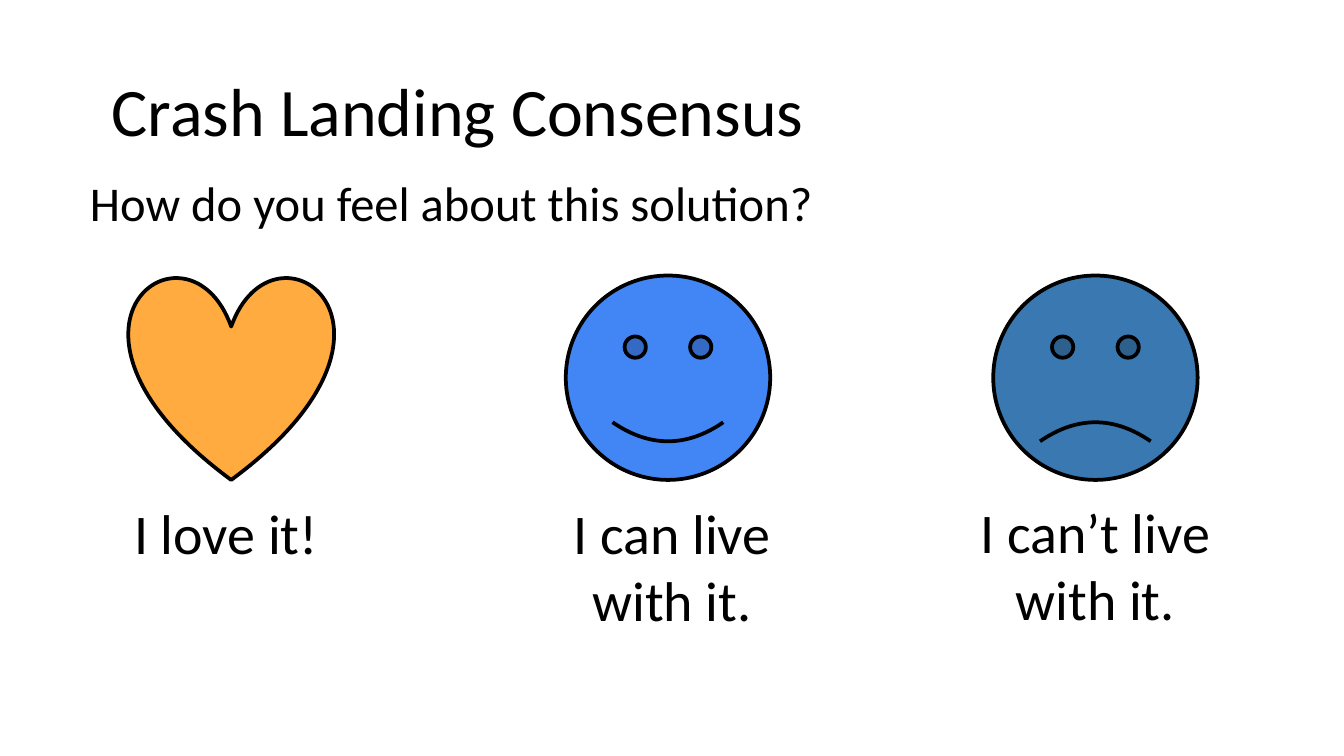
from dataclasses import dataclass

from lxml import etree
from pptx import Presentation
from pptx.dml.color import RGBColor
from pptx.enum.shapes import MSO_SHAPE
from pptx.enum.text import MSO_ANCHOR, MSO_AUTO_SIZE, PP_ALIGN
from pptx.oxml.ns import qn
from pptx.util import Pt

HEART, SMILEY = MSO_SHAPE.HEART, MSO_SHAPE.SMILEY_FACE
LEFT, CENTER = PP_ALIGN.LEFT, PP_ALIGN.CENTER
TOP, BOTTOM = MSO_ANCHOR.TOP, MSO_ANCHOR.BOTTOM


@dataclass(frozen=True)
class Theme:
    font: str = "Calibri"
    ink: str = "000000"
    love: str = "FFAB40"
    accept: str = "4285F4"
    reject: str = "3978B1"
    title: float = 36.4
    body: float = 26
    label: float = 30
    outline: float = 2


THEME = Theme()


def rgb(value):
    return RGBColor.from_string(value)


def place(sp, box):
    sp.left, sp.top, sp.width, sp.height = (Pt(v) for v in box)


def write(sp, text, size, align=LEFT, anchor=TOP, insets=(7.2, 3.6, 7.2, 3.6)):
    tf = sp.text_frame
    tf.word_wrap = True
    tf.auto_size = MSO_AUTO_SIZE.NONE
    tf.vertical_anchor = anchor
    tf.margin_left, tf.margin_top, tf.margin_right, tf.margin_bottom = (
        Pt(v) for v in insets)
    p = tf.paragraphs[0]
    p.alignment = align
    p.space_before = Pt(0)
    r = p.add_run()
    r.text = text
    r.font.name = THEME.font
    r.font.size = Pt(size)
    r.font.color.rgb = rgb(THEME.ink)
    return p


def add_title(s, box, text):
    sp = s.shapes.title
    place(sp, box)
    write(sp, text, THEME.title, anchor=BOTTOM, insets=(0, 3.6, 0, 0))


def add_question(s, box, text):
    sp = s.placeholders[1]
    place(sp, box)
    p = write(sp, text, THEME.body)
    # Plain paragraph: small indent, no bullet
    pPr = p._p.get_or_add_pPr()
    pPr.set("marL", str(Pt(5)))
    pPr.set("indent", "0")
    etree.SubElement(pPr, qn("a:buNone"))


def add_choice(s, box, icon, fill, text, label_box, mouth=None, align=CENTER):
    """Draw an icon in box; label_box is relative to the icon's corner."""
    x, y, w, h = box
    sp = s.shapes.add_shape(icon, Pt(x), Pt(y), Pt(w), Pt(h))
    sp.shadow.inherit = False
    sp.fill.solid()
    sp.fill.fore_color.rgb = rgb(fill)
    sp.line.color.rgb = rgb(THEME.ink)
    sp.line.width = Pt(THEME.outline)
    if mouth is not None:
        sp.adjustments[0] = mouth

    dx, dy, label_w, label_h = label_box
    label = s.shapes.add_textbox(Pt(x + dx), Pt(y + dy), Pt(label_w), Pt(label_h))
    write(label, text, THEME.label, align=align)


def main():
    prs = Presentation()
    prs.slide_width, prs.slide_height = Pt(720), Pt(405)
    s = prs.slides.add_slide(prs.slide_layouts[1])

    # Heading and question
    add_title(s, (59.8, 35.3, 635.8, 45.4), "Crash Landing Consensus")
    add_question(s, (36, 89.3, 643, 270.7), "How do you feel about this solution?")

    # Three answers in a row
    top, size = 147.6, 109.5
    choices = [
        (69.1, HEART, THEME.love, "I love it!", (-4.3, 116, 117.4, 44), None, LEFT),
        (303.1, SMILEY, THEME.accept, "I can live with it.",
         (-5, 116, 123.8, 80), 0.047, CENTER),
        (532.1, SMILEY, THEME.reject, "I can’t live with it.",
         (-14.4, 115.2, 138.2, 97.2), -0.047, CENTER),
    ]
    for x, *details in choices:
        add_choice(s, (x, top, size, size), *details)

    prs.save("out.pptx")


if __name__ == "__main__":
    main()
